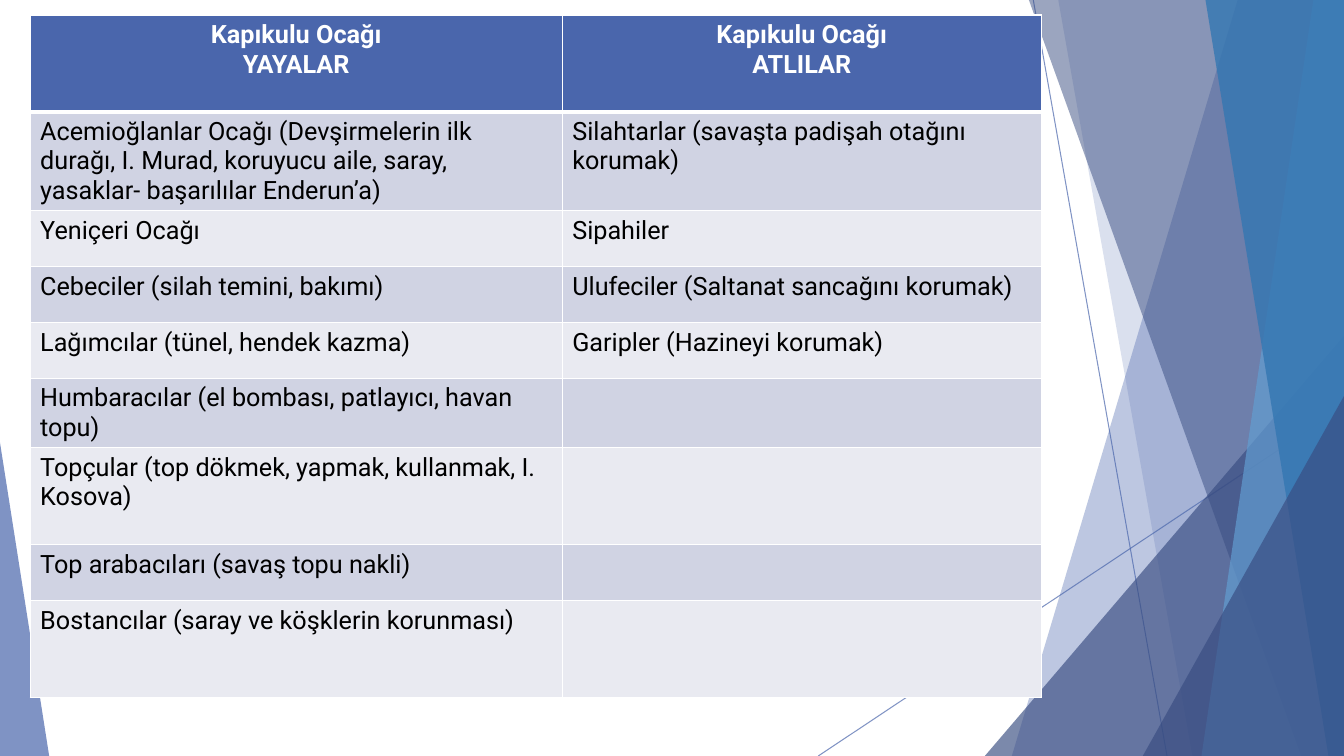
"""Build the slide with the table of the Kapıkulu corps."""
from dataclasses import dataclass

from lxml.etree import SubElement
from pptx import Presentation
from pptx.dml.color import RGBColor
from pptx.enum.shapes import MSO_CONNECTOR as CONN, MSO_SHAPE as SHAPE
from pptx.enum.text import PP_ALIGN as ALIGN
from pptx.oxml.ns import qn
from pptx.util import Cm, Pt

WIDTH, HEIGHT = 33.87, 19.05
FONT = "Roboto"
COLORS = {
    "blue": "4A66AC", "navy": "384C81", "sky": "629DD1", "ocean": "3477B2",
    "white": "FFFFFF", "black": "000000", "odd": "D0D3E3", "even": "E9EAF1",
}


@dataclass
class Line:
    x1: float
    y1: float
    x2: float
    y2: float


@dataclass
class Band:
    top_x: float
    bottom_x: float
    color: str
    alpha: int


@dataclass
class Triangle:
    x: float
    y: float
    width: float
    apex: float
    color: str
    alpha: int


@dataclass
class Row:
    height: float
    texts: tuple[str, str]


LINES = [Line(26.04, 0, 29.41, HEIGHT), Line(WIDTH, 10.24, 20.62, HEIGHT)]
FACETS = [
    Band(31.19, 25.5, "blue", 36),
    Band(26.67, 30.05, "blue", 20),
    Triangle(24.82, 8.46, 9.05, 1, "navy", 66),
    Band(25.93, 32.79, "navy", 50),
    Band(33.1, 30.28, "sky", 70),
    Band(30.38, 33.48, "ocean", 80),
    Triangle(28.8, 9.98, 5.07, 1, "navy", 66),
    Triangle(0, 11.15, 1.24, 0, "blue", 70),
]
TALL, SHORT = 2.44, 1.41
COLUMNS = (13.41, 12.07)
ROWS = [
    Row(TALL, ("Kapıkulu Ocağı\nYAYALAR", "Kapıkulu Ocağı\nATLILAR")),
    Row(TALL, ("Acemioğlanlar Ocağı (Devşirmelerin ilk durağı, I. Murad, koruyucu aile, "
               "saray, yasaklar- başarılılar Enderun’a)",
               "Silahtarlar (savaşta padişah otağını korumak)")),
    Row(SHORT, ("Yeniçeri Ocağı", "Sipahiler")),
    Row(SHORT, ("Cebeciler (silah temini, bakımı)", "Ulufeciler (Saltanat sancağını korumak)")),
    Row(SHORT, ("Lağımcılar (tünel, hendek kazma)", "Garipler (Hazineyi korumak)")),
    Row(SHORT, ("Humbaracılar (el bombası, patlayıcı, havan topu)", "")),
    Row(TALL, ("Topçular (top dökmek, yapmak, kullanmak, I. Kosova)", "")),
    Row(SHORT, ("Top arabacıları (savaş topu nakli)", "")),
    Row(TALL, ("Bostancılar (saray ve köşklerin korunması)", "")),
]


def rgb(name: str) -> RGBColor:
    return RGBColor.from_string(COLORS[name])


def set_alpha(element, percent: int) -> None:
    color = next(element.iter(qn("a:srgbClr")))
    SubElement(color, qn("a:alpha")).set("val", str(percent * 1000))


def write_text(tf, text: str, *, size=18, color="black", bold=False, align=ALIGN.LEFT) -> None:
    for i, line in enumerate(text.split("\n")):
        p = tf.paragraphs[0] if i == 0 else tf.add_paragraph()
        p.alignment = align
        p.font.size = Pt(size)
        if line:
            r = p.add_run()
            r.text = line
            r.font.name, r.font.size, r.font.bold = FONT, Pt(size), bold
            r.font.color.rgb = rgb(color)


def draw_line(s, line: Line) -> None:
    c = s.shapes.add_connector(CONN.STRAIGHT, Cm(line.x1), Cm(line.y1), Cm(line.x2), Cm(line.y2))
    c.line.width = Pt(0.75)
    c.line.color.rgb = rgb("blue")
    spPr = c._element.spPr
    set_alpha(spPr, 70)
    SubElement(spPr, qn("a:effectLst"))


def draw_facet(s, facet: Band | Triangle) -> None:
    if isinstance(facet, Band):
        builder = s.shapes.build_freeform(Cm(facet.top_x), 0)
        corners = [(WIDTH, 0), (WIDTH, HEIGHT), (facet.bottom_x, HEIGHT)]
        builder.add_line_segments([(Cm(x), Cm(y)) for x, y in corners])
        sp = builder.convert_to_shape()
    else:
        sp = s.shapes.add_shape(SHAPE.ISOSCELES_TRIANGLE, Cm(facet.x), Cm(facet.y),
                                Cm(facet.width), Cm(HEIGHT - facet.y))
        sp.adjustments[0] = facet.apex
    sp.shadow.inherit = False
    sp.line.fill.background()
    sp.fill.solid()
    sp.fill.fore_color.rgb = rgb(facet.color)
    set_alpha(sp._element.spPr, facet.alpha)


def set_borders(cell, **widths: float) -> None:
    tcPr = cell._tc.get_or_add_tcPr()
    for side in "LRTB":
        ln = SubElement(tcPr, qn(f"a:ln{side}"), w=str(Pt(widths.get(side, 1))))
        fill = SubElement(ln, qn("a:solidFill"))
        SubElement(fill, qn("a:srgbClr"), val=COLORS["white"])


def draw_table(s, rows: list[Row]) -> None:
    table = s.shapes.add_table(len(rows), len(COLUMNS), Cm(0.76), Cm(0.38),
                               Cm(sum(COLUMNS)), Cm(sum(row.height for row in rows))).table
    for column, width in zip(table.columns, COLUMNS):
        column.width = Cm(width)
    for i, row in enumerate(rows):
        table.rows[i].height = Cm(row.height)
        for j, text in enumerate(row.texts):
            cell = table.cell(i, j)
            set_borders(cell, T=3 if i == 1 else 1, B=3 if i == 0 else 1)
            cell.fill.solid()
            if i == 0:
                cell.fill.fore_color.rgb = rgb("blue")
                write_text(cell.text_frame, text, color="white", bold=True, align=ALIGN.CENTER)
            else:
                cell.fill.fore_color.rgb = rgb("odd" if i % 2 else "even")
                write_text(cell.text_frame, text)


def main() -> None:
    prs = Presentation()
    prs.slide_width, prs.slide_height = Cm(WIDTH), Cm(HEIGHT)
    s = prs.slides.add_slide(prs.slide_layouts[6])
    for line in LINES:
        draw_line(s, line)
    for facet in FACETS:
        draw_facet(s, facet)
    draw_table(s, ROWS)
    prs.save("out.pptx")


if __name__ == "__main__":
    main()
